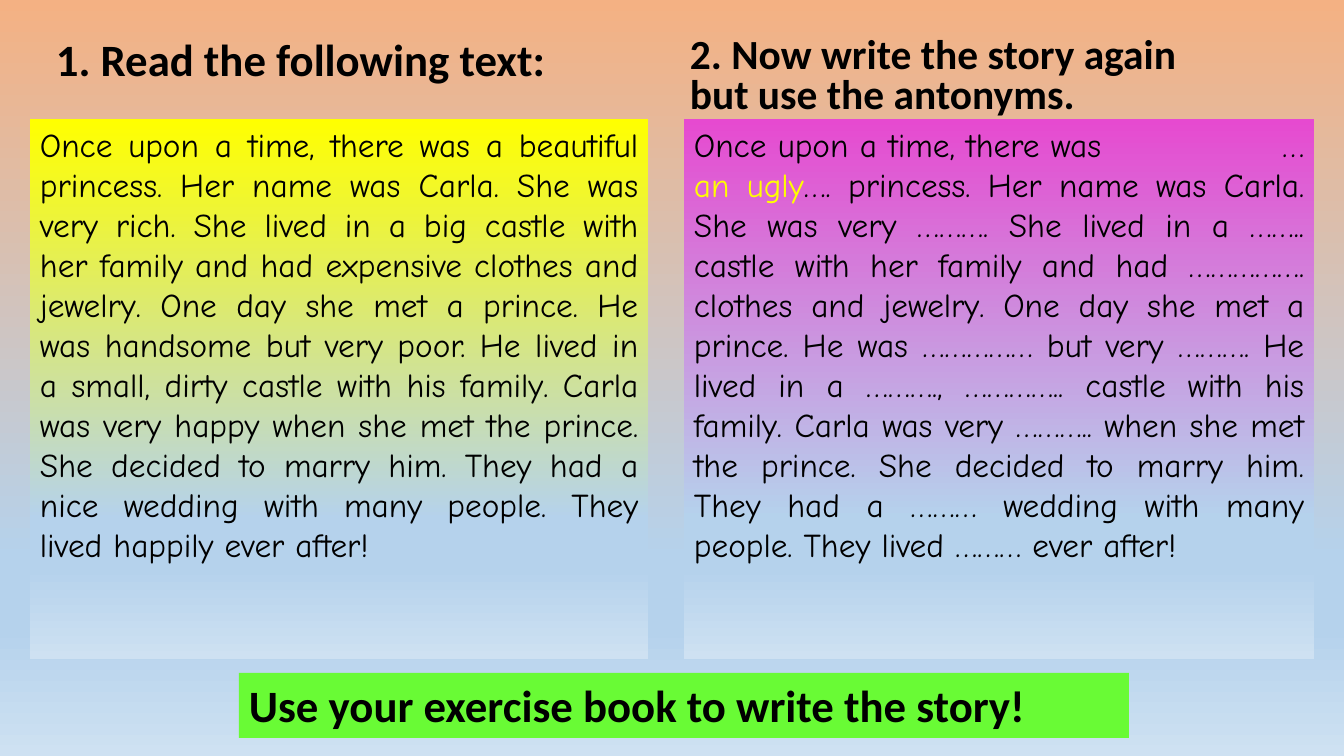
"""Builds a slide on rewriting a story with antonyms."""
from lxml.etree import SubElement as Sub
from pptx import Presentation
from pptx.dml.color import RGBColor as RGB
from pptx.enum.shapes import MSO_SHAPE as Kind
from pptx.enum.text import MSO_ANCHOR as Anchor, PP_ALIGN as Align
from pptx.oxml.ns import qn
from pptx.util import Pt

PX = 914400 / 100.8
FADE = [(74, "B5D2EC"), (83, "B5D2EC"), (100, "CEE1F2")]


def shade(fill, root, top):
    """Fade a fill downwards from the top colour."""
    fill.gradient()
    fill.gradient_angle = 270
    stops = root.find(".//" + qn("a:gsLst"))
    stops.clear()
    for pos, hue in [(0, top)] + FADE:
        stop = Sub(stops, qn("a:gs"), pos=str(pos * 1000))
        Sub(stop, qn("a:srgbClr"), val=hue)


def write(para, text, font, size, bold=False, hue="000000"):
    """Add one run of text."""
    run = para.add_run()
    run.text = text
    run.font.name, run.font.size, run.font.bold = font, Pt(size), bold
    run.font.color.rgb = RGB.from_string(hue)


deck = Presentation()
deck.slide_width, deck.slide_height = round(1344 * PX), round(756 * PX)
slide = deck.slides.add_slide(deck.slide_layouts[6])
shapes = slide.shapes
shade(slide.background.fill, slide.element, "F4B183")

heads = [
    (46, 0, 32, 0.9, "1. Read the following text:"),
    (680, 31, 29.6, 0.8, "2. Now write the story again but use the antonyms."),
]
for left, top, size, gap, text in heads:
    frame = shapes.add_textbox(*[round(n * PX) for n in (left, top, 569, 91)]).text_frame
    frame.word_wrap = True
    frame.vertical_anchor = Anchor.BOTTOM
    para = frame.paragraphs[0]
    para.line_spacing, para.space_before = gap, Pt(10)
    write(para, text, "Calibri", size, True)

story = (
    "Once upon a time, there was a beautiful princess. Her name was Carla. "
    "She was very rich. She lived in a big castle with her family and had "
    "expensive clothes and jewelry. One day she met a prince. He was handsome "
    "but very poor. He lived in a small, dirty castle with his family. Carla "
    "was very happy when she met the prince. She decided to marry him. They "
    "had a nice wedding with many people. They lived happily ever after!"
)
start = "Once upon a time, there was\t…"
rest = (
    "…. princess. Her name was Carla. She was very ………. She lived in a …….. "
    "castle with her family and had ……………. clothes and jewelry. One day she "
    "met a prince. He was …………… but very ………. He lived in a ………., ………….. "
    "castle with his family. Carla was very ……….. when she met the prince. "
    "She decided to marry him. They had a ……… wedding with many people. "
    "They lived ……… ever after!"
)
black, yellow = "000000", "FFFF00"
cards = [
    (30, 618, "FFFF00", [(story, black)]),
    (684, 630, "E64AD0", [(start, black), ("an ugly", yellow), (rest, black)]),
]
for left, width, top, parts in cards:
    card = shapes.add_shape(Kind.RECTANGLE, *[round(n * PX) for n in (left, 119, width, 540)])
    card.shadow.inherit = False
    card.line.fill.background()
    shade(card.fill, card.element, top)
    frame = card.text_frame
    frame.word_wrap = True
    frame.vertical_anchor = Anchor.TOP
    para = frame.paragraphs[0]
    para.alignment, para.space_before = Align.JUSTIFY, Pt(12)
    for text, hue in parts:
        write(para, text, "Comic Neue", 23.8, hue=hue)
        if text == start:
            para.add_line_break()
            tabs = Sub(para._p.get_or_add_pPr(), qn("a:tabLst"))
            Sub(tabs, qn("a:tab"), pos=str(round(587 * PX)), algn="l")

strip = shapes.add_shape(Kind.RECTANGLE, *[round(n * PX) for n in (239, 673, 890, 65)])
strip.shadow.inherit = False
strip.line.fill.background()
strip.fill.solid()
strip.fill.fore_color.rgb = RGB.from_string("69FB35")
frame = strip.text_frame
frame.word_wrap = True
frame.vertical_anchor = Anchor.TOP
para = frame.paragraphs[0]
para.alignment = Align.LEFT
write(para, "Use your exercise book to write the story!", "Calibri", 32, True)

deck.save("out.pptx")
